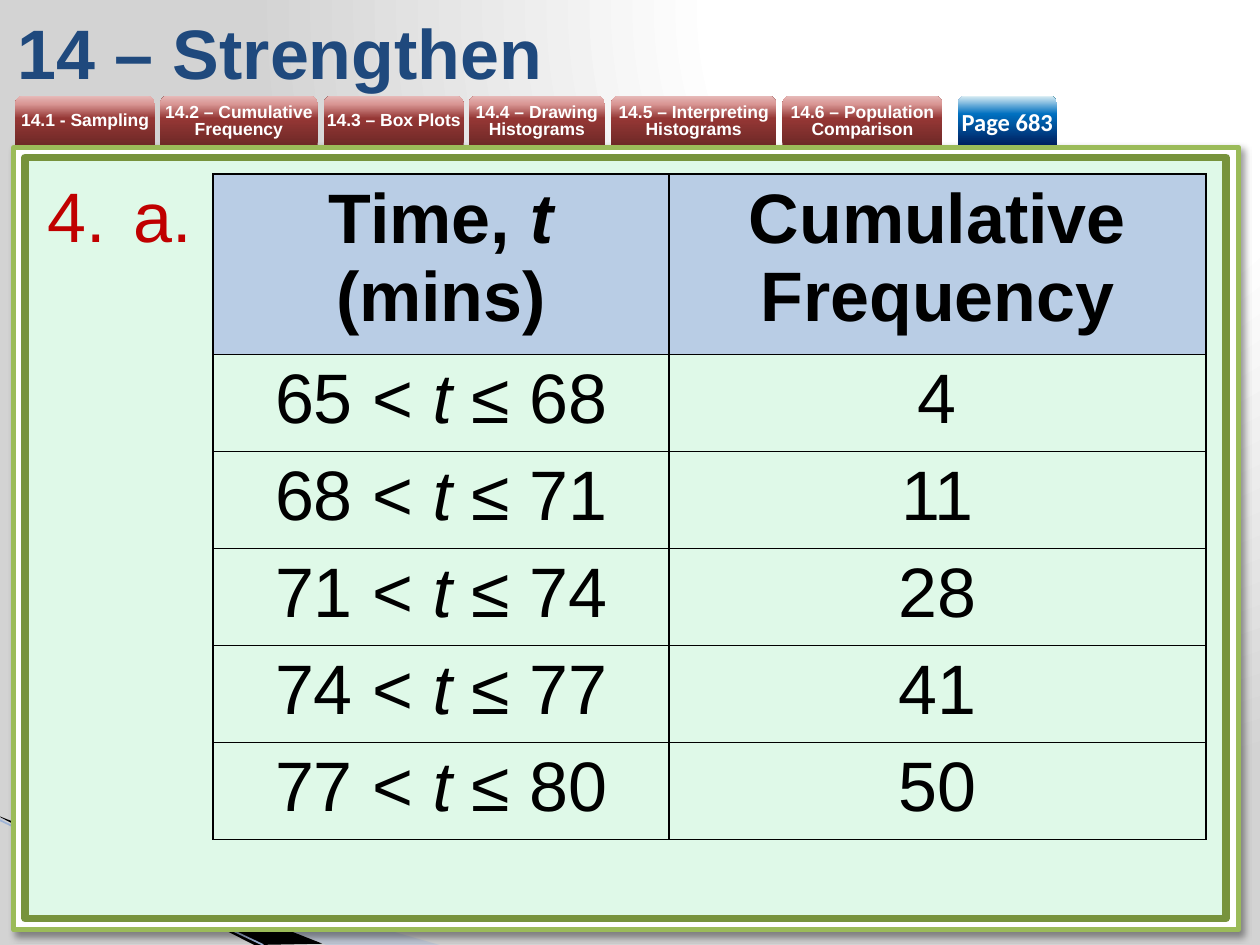
from typing import NamedTuple

from lxml import etree
from pptx import Presentation
from pptx import util as u
from pptx.dml.color import RGBColor
from pptx.enum import shapes, text
from pptx.oxml import ns

COLORS = {
    "white": "FFFFFF", "black": "000000", "grey": "D3D3D3", "swoosh": "A7B9DB",
    "swoosh_edge": "9EB3D6", "frame": "9BBB59", "panel": "DFF9E8", "panel_edge": "77933C",
    "title": "1F497D", "number": "C00000", "header": "B9CDE5",
}
RED_STOPS = [(0, "6F2927"), (54, "953735"), (83, "D99694"), (100, "E6B9B8")]
BLUE_STOPS = [(0, "002060"), (63, "0070C0"), (100, "DBEEF4")]
BACKGROUND_STOPS = [(0, COLORS["white"]), (40, COLORS["white"]), (100, COLORS["grey"])]


class Tab(NamedTuple):
    label: str
    left: float
    width: float
    stops: list = RED_STOPS
    font: str = "Arial"
    size: float = 10
    spacing: float | None = 10


class Panel(NamedTuple):
    left: float
    top: float
    width: float
    height: float
    fill: str
    edge: str
    weight: float


TABS = [
    Tab("14.1 - Sampling", 0.12, 1.11),
    Tab("14.2 – Cumulative Frequency", 1.27, 1.25),
    Tab("14.3 – Box Plots", 2.57, 1.11),
    Tab("14.4 – Drawing Histograms", 3.72, 1.08),
    Tab("14.5 – Interpreting Histograms", 4.85, 1.31),
    Tab("14.6 – Population Comparison", 6.21, 1.27),
    Tab("Page 683", 7.6, 0.79, BLUE_STOPS, "Calibri", 14, None),
]
FRAME = Panel(0.11, 1.17, 9.72, 6.21, "white", "frame", 3)
ANSWER_PANEL = Panel(0.2, 1.25, 9.53, 6.04, "panel", "panel_edge", 4.33)
TIMES = [65, 68, 71, 74, 77, 80]
CUMULATIVE = [4, 11, 28, 41, 50]


def rgb(name: str) -> RGBColor:
    return RGBColor.from_string(COLORS[name])


def add(parent, tag: str, **attributes):
    child = etree.SubElement(parent, ns.qn(tag))
    for key, value in attributes.items():
        child.set(key, str(value))
    return child


def set_gradient(fill, owner, stops: list):
    fill.gradient()
    gradient = owner.find(".//" + ns.qn("a:gradFill"))
    for child in list(gradient):
        gradient.remove(child)
    stop_list = add(gradient, "a:gsLst")
    for position, color in stops:
        add(add(stop_list, "a:gs", pos=position * 1000), "a:srgbClr", val=color)
    return gradient


def write(frame, content: str, *, size: float, color: str, font: str = "Arial",
          bold: bool = False, align=text.PP_ALIGN.LEFT, anchor=text.MSO_ANCHOR.TOP,
          spacing: float | None = None, inset: float | None = None):
    frame.word_wrap = True
    frame.vertical_anchor = anchor
    if inset is not None:
        frame.margin_left = frame.margin_right = u.Inches(inset)
        frame.margin_top = frame.margin_bottom = u.Inches(inset)
    paragraph = frame.paragraphs[0]
    paragraph.alignment = align
    if spacing:
        paragraph.line_spacing = u.Pt(spacing)
    for index, part in enumerate(content.split("*")):
        if part:
            run = paragraph.add_run()
            run.text = part
            run.font.name, run.font.size, run.font.bold = font, u.Pt(size), bold
            run.font.italic = index % 2 == 1
            run.font.color.rgb = rgb(color)
    return paragraph


def draw_swoosh(slide, points: list, color: str, alpha: int):
    corners = [(u.Inches(x), u.Inches(y)) for x, y in points]
    builder = slide.shapes.build_freeform(*corners[0])
    builder.add_line_segments(corners[1:], close=True)
    swoosh = builder.convert_to_shape()
    swoosh.shadow.inherit = False
    swoosh.line.fill.background()
    swoosh.fill.solid()
    swoosh.fill.fore_color.rgb = rgb(color)
    if alpha < 100:
        fill_color = swoosh._element.spPr.find(".//" + ns.qn("a:srgbClr"))
        add(fill_color, "a:alpha", val=alpha * 1000)


def draw_panel(slide, panel: Panel):
    box = slide.shapes.add_shape(
        shapes.MSO_SHAPE.RECTANGLE, u.Inches(panel.left), u.Inches(panel.top),
        u.Inches(panel.width), u.Inches(panel.height))
    box.fill.solid()
    box.fill.fore_color.rgb = rgb(panel.fill)
    box.line.color.rgb = rgb(panel.edge)
    box.line.width = u.Pt(panel.weight)
    box.shadow.inherit = False
    return box


def draw_tab(slide, tab: Tab):
    button = slide.shapes.add_shape(
        shapes.MSO_SHAPE.ROUND_2_SAME_RECTANGLE, u.Inches(tab.left), u.Inches(0.76),
        u.Inches(tab.width), u.Inches(0.39))
    gradient = set_gradient(button.fill, button._element.spPr, tab.stops)
    add(gradient, "a:lin", ang=16200000, scaled=0)
    button.line.fill.background()
    button.shadow.inherit = False
    write(button.text_frame, tab.label, size=tab.size, color="white", font=tab.font, bold=True,
          align=text.PP_ALIGN.CENTER, anchor=text.MSO_ANCHOR.MIDDLE,
          spacing=tab.spacing, inset=0)


def fill_cell(cell, content: str, header: bool):
    if header:
        cell.fill.solid()
        cell.fill.fore_color.rgb = rgb("header")
    else:
        cell.fill.background()
    properties = cell._tc.get_or_add_tcPr()
    for index, side in enumerate(("a:lnL", "a:lnR", "a:lnT", "a:lnB")):
        border = add(properties, side, w=u.Pt(1))
        add(add(border, "a:solidFill"), "a:srgbClr", val=COLORS["black"])
        properties.insert(index, border)
    cell.margin_left = cell.margin_right = u.Inches(0.05)
    cell.margin_top = cell.margin_bottom = u.Inches(0.05)
    write(cell.text_frame, content, size=40, color="black", bold=header,
          align=text.PP_ALIGN.CENTER)


def draw_table(slide):
    rows = [("Time, *t* (mins)", "Cumulative Frequency")]
    rows += [(f"{low} < *t* ≤ {high}", str(total))
             for low, high, total in zip(TIMES, TIMES[1:], CUMULATIVE)]
    table = slide.shapes.add_table(
        len(rows), 2, u.Inches(1.69), u.Inches(1.38), u.Inches(7.88), u.Inches(5.27)).table
    table.first_row = table.horz_banding = False
    for column, width in zip(table.columns, (3.62, 4.26)):
        column.width = u.Inches(width)
    for index, row in enumerate(rows):
        table.rows[index].height = u.Inches(0.77 if index else 1.43)
        for column, content in enumerate(row):
            fill_cell(table.cell(index, column), content, header=index == 0)


def main():
    deck = Presentation()
    deck.slide_width, deck.slide_height = u.Inches(10), u.Inches(7.5)
    slide = deck.slides.add_slide(deck.slide_layouts[6])
    backdrop = set_gradient(slide.background.fill, slide._element, BACKGROUND_STOPS)
    add(add(backdrop, "a:path", path="circle"), "a:fillToRect", l=65000, t=0, r=0, b=98000)

    draw_swoosh(slide, [(0, 6.5), (3.49, 7.5), (2.59, 7.5), (0, 6.49)], "swoosh", 40)
    draw_swoosh(slide, [(0, 6.48), (2.56, 7.49), (2.02, 7.5), (0.01, 6.49)], "black", 100)
    edge = slide.shapes.add_connector(
        shapes.MSO_CONNECTOR.STRAIGHT, u.Inches(0), u.Inches(6.51), u.Inches(2.09), u.Inches(7.5))
    edge.line.color.rgb = rgb("swoosh_edge")
    edge.line.width = u.Pt(0.95)
    add(edge._element.spPr, "a:effectLst")

    frame = draw_panel(slide, FRAME)
    effects = frame._element.spPr.find(ns.qn("a:effectLst"))
    shadow = add(effects, "a:outerShdw", blurRad=u.Pt(4), dist=u.Pt(3), dir=2700000,
                 algn="tl", rotWithShape=0)
    add(add(shadow, "a:srgbClr", val=COLORS["black"]), "a:alpha", val=40000)
    draw_panel(slide, ANSWER_PANEL)
    for tab in TABS:
        draw_tab(slide, tab)

    title = slide.shapes.add_textbox(u.Inches(0.04), u.Inches(0.05), u.Inches(8.43), u.Inches(0.71))
    write(title.text_frame, "14 – Strengthen", size=40, color="title", bold=True,
          anchor=text.MSO_ANCHOR.MIDDLE)

    question = slide.shapes.add_textbox(
        u.Inches(0.28), u.Inches(1.32), u.Inches(9.37), u.Inches(3.47))
    part = write(question.text_frame, "a.", size=40, color="number")
    properties = part._p.get_or_add_pPr()
    properties.set("marL", str(u.Inches(0.68)))
    properties.set("indent", str(u.Inches(-0.68)))
    add(add(properties, "a:buClr"), "a:srgbClr", val=COLORS["number"])
    add(properties, "a:buFont", typeface="Arial")
    add(properties, "a:buAutoNum", type="arabicPeriod", startAt=4)

    draw_table(slide)
    deck.save("out.pptx")


if __name__ == "__main__":
    main()
